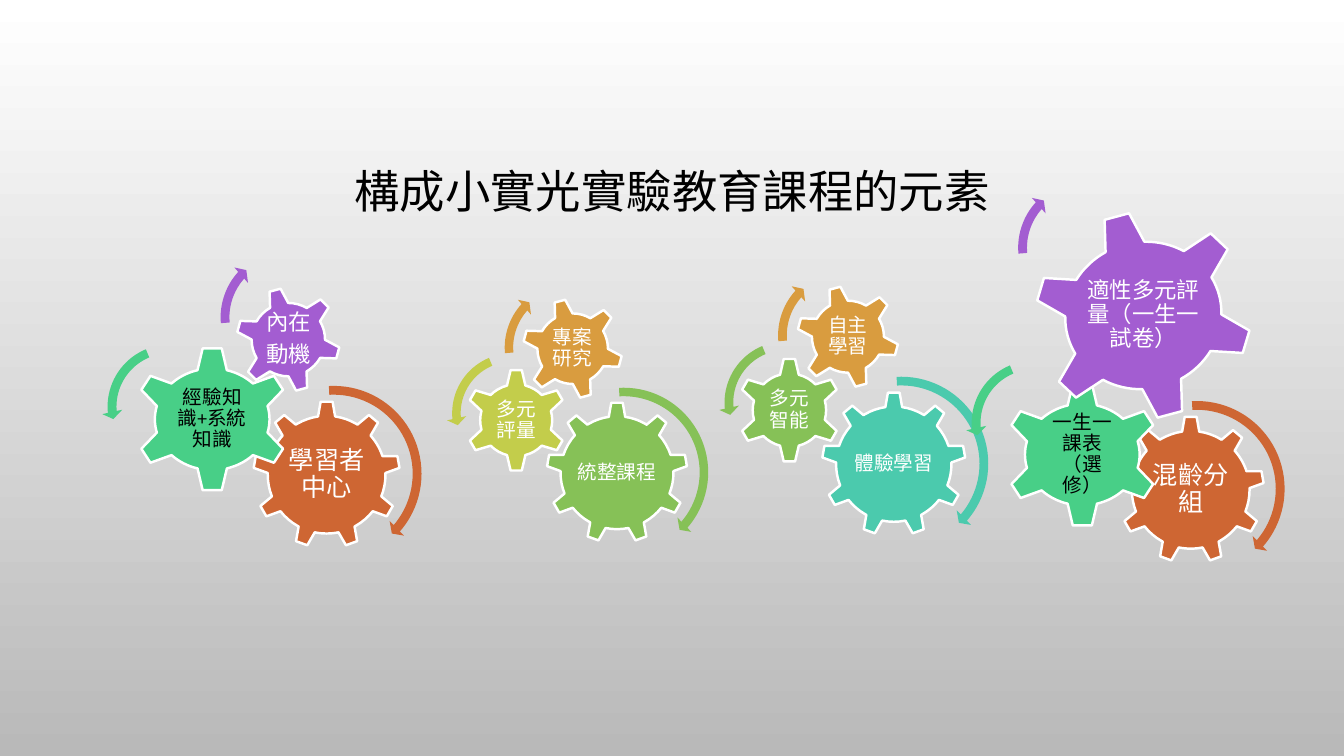
from dataclasses import dataclass

from pptx import Presentation
from pptx.dml.color import RGBColor
from pptx.enum.shapes import MSO_SHAPE
from pptx.enum.text import MSO_ANCHOR, PP_ALIGN
from pptx.util import Inches, Pt

WHITE, BLACK = "FFFFFF", "000000"
ORANGE, MINT, PURPLE = "CE6633", "48CF87", "A35DD1"
TEAL, GREEN, GOLD, LIME = "4BCAAD", "86C157", "D99C3F", "C3CD4B"

Box = tuple[float, float, float, float]


@dataclass(frozen=True)
class Kind:
    """A gear type: its outline, label share of the gear, and turning arrow."""
    gear: MSO_SHAPE
    rotation: float
    label_share: tuple[float, float]
    arrow: MSO_SHAPE
    arrow_adjustments: tuple[float, ...]


@dataclass(frozen=True)
class Gear:
    kind: Kind
    box: Box
    arrow_box: Box
    color: str
    label: str
    size: float = 14
    text_color: str = WHITE


LARGE = Kind(MSO_SHAPE.GEAR_9, 0, (0.6, 0.51),
             MSO_SHAPE.CIRCULAR_ARROW, (0.047, 2.99, 24.5, 160.12, 0.055))
LEFT = Kind(MSO_SHAPE.GEAR_6, 0, (0.51, 0.49),
            MSO_SHAPE.LEFT_CIRCULAR_ARROW, (0.065, 4.3, 104.89, 148.38, 0.075))
TILTED = Kind(MSO_SHAPE.GEAR_6, 345, (0.56, 0.56),
              MSO_SHAPE.CIRCULAR_ARROW, (0.06, 3.94, 133.14, 105.08, 0.07))

GEAR_SETS = [
    [
        Gear(LARGE, (2.51, 3.98, 1.46, 1.46), (2.38, 3.77, 1.86, 1.86), ORANGE, "學習者中心", 18),
        Gear(LEFT, (1.32, 3.44, 1.57, 1.44), (1.01, 3.36, 1.35, 1.35), MINT,
             "經驗知識+系統知識", text_color=BLACK),
        Gear(TILTED, (2.34, 2.85, 1.04, 1.04), (2.13, 2.42, 1.46, 1.46), PURPLE, "內在\n動機", 16),
    ],
    [
        Gear(LARGE, (8.15, 3.89, 1.43, 1.43), (8.02, 3.68, 1.84, 1.84), TEAL, "體驗學習"),
        Gear(LEFT, (7.31, 3.55, 1.04, 1.04), (7.13, 3.33, 1.33, 1.33), GREEN, "多元智能"),
        Gear(TILTED, (7.9, 2.83, 1.02, 1.02), (7.66, 2.61, 1.44, 1.44), GOLD, "自主學習"),
    ],
    [
        Gear(LARGE, (5.42, 3.99, 1.4, 1.4), (5.29, 3.79, 1.79, 1.79), GREEN, "統整課程"),
        Gear(LEFT, (4.61, 3.66, 1.02, 1.02), (4.43, 3.45, 1.3, 1.3), LIME, "多元評量"),
        Gear(TILTED, (5.18, 2.96, 1, 1), (4.95, 2.75, 1.4, 1.4), GOLD, "專案研究"),
    ],
    [
        Gear(LARGE, (11.08, 4.13, 1.46, 1.46), (10.94, 3.92, 1.86, 1.86), ORANGE, "混齡分組", 18),
        Gear(LEFT, (9.95, 3.79, 1.57, 1.44), (9.58, 3.52, 1.35, 1.35), MINT,
             "一生一課表（選修）", text_color=BLACK),
        Gear(TILTED, (10.25, 2.09, 2.18, 2.08), (10.04, 1.73, 1.46, 1.46), PURPLE,
             "適性多元評量（一生一試卷）", 16),
    ],
]


def rgb(color: str) -> RGBColor:
    return RGBColor.from_string(color)


def add_filled(shapes, preset: MSO_SHAPE, box: Box, color: str):
    s = shapes.add_shape(preset, *map(Inches, box))
    s.shadow.inherit = False
    s.fill.solid()
    s.fill.fore_color.rgb = rgb(color)
    return s


def add_text(shapes, box: Box, text: str, size: float, color: str,
             font: str = "Calibri", inset: float = 0.02) -> None:
    tf = shapes.add_textbox(*map(Inches, box)).text_frame
    tf.word_wrap = True
    tf.vertical_anchor = MSO_ANCHOR.MIDDLE
    tf.margin_left = tf.margin_right = tf.margin_top = tf.margin_bottom = Inches(inset)
    tf.text = text
    for p in tf.paragraphs:
        p.alignment = PP_ALIGN.CENTER
        p.line_spacing = 0.9
        p.space_after = Pt(round(0.35 * size, 1))
        p.font.name = font
        p.font.size = Pt(size)
        p.font.color.rgb = rgb(color)


def add_gear(shapes, gear: Gear) -> None:
    """Draw a gear with its label centred on it."""
    s = add_filled(shapes, gear.kind.gear, gear.box, gear.color)
    s.rotation = gear.kind.rotation
    s.line.color.rgb = rgb(WHITE)
    s.line.width = Pt(1.75)
    left, top, width, height = gear.box
    share_x, share_y = gear.kind.label_share
    label_box = (left + width * (1 - share_x) / 2, top + height * (1 - share_y) / 2,
                 width * share_x, height * share_y)
    add_text(shapes, label_box, gear.label, gear.size, gear.text_color)


def add_arrow(shapes, gear: Gear) -> None:
    s = add_filled(shapes, gear.kind.arrow, gear.arrow_box, gear.color)
    s.line.fill.background()
    for i, value in enumerate(gear.kind.arrow_adjustments):
        s.adjustments[i] = value


def main() -> None:
    prs = Presentation()
    prs.slide_width, prs.slide_height = Inches(13.33), Inches(7.5)
    slide = prs.slides.add_slide(prs.slide_layouts[6])

    background = slide.background.fill
    background.gradient()
    background.gradient_angle = 270
    for stop, color in zip(background.gradient_stops, (WHITE, "B9B9B9")):
        stop.color.rgb = rgb(color)

    add_text(slide.shapes, (3.29, 1.45, 6.75, 0.94), "構成小實光實驗教育課程的元素",
             32.4, BLACK, "Noto Sans CJK SC", 0.05)
    for gear_set in GEAR_SETS:
        group = slide.shapes.add_group_shape()
        for gear in gear_set:
            add_gear(group.shapes, gear)
        for gear in gear_set:
            add_arrow(group.shapes, gear)

    prs.save("out.pptx")


if __name__ == "__main__":
    main()
